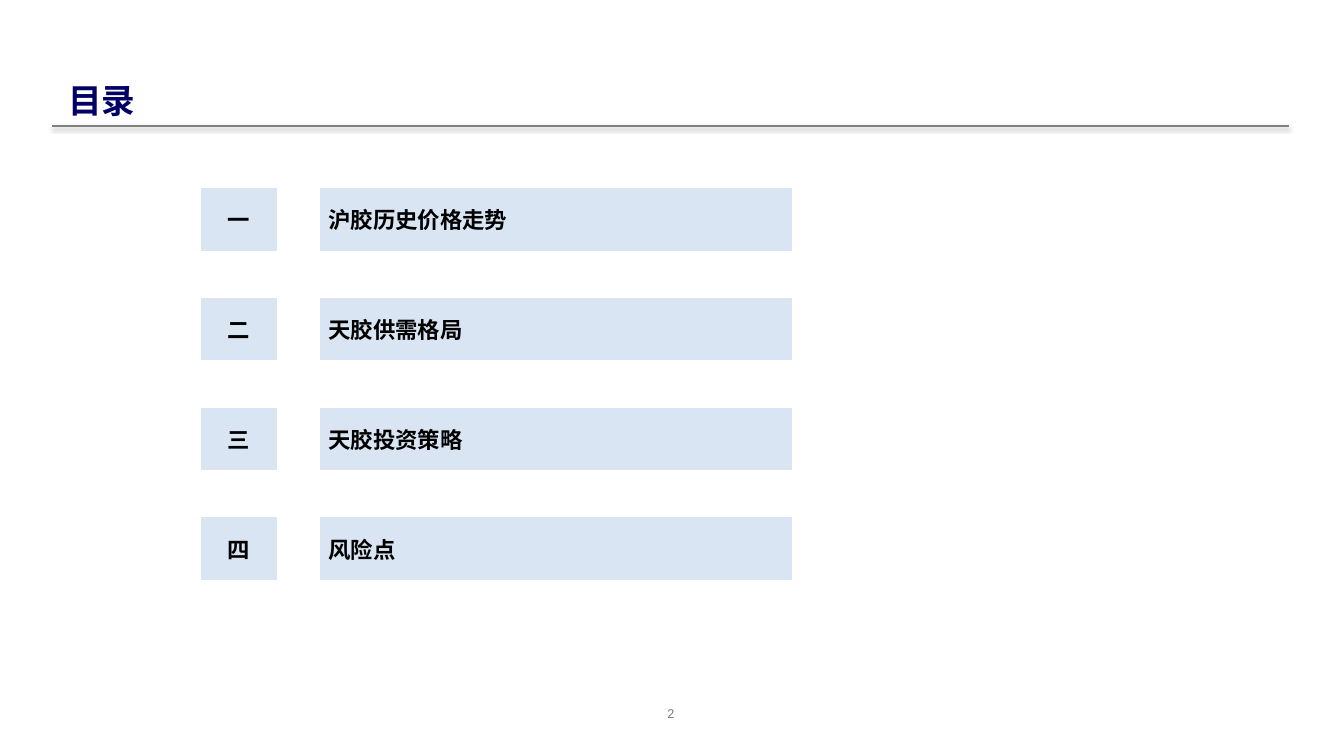
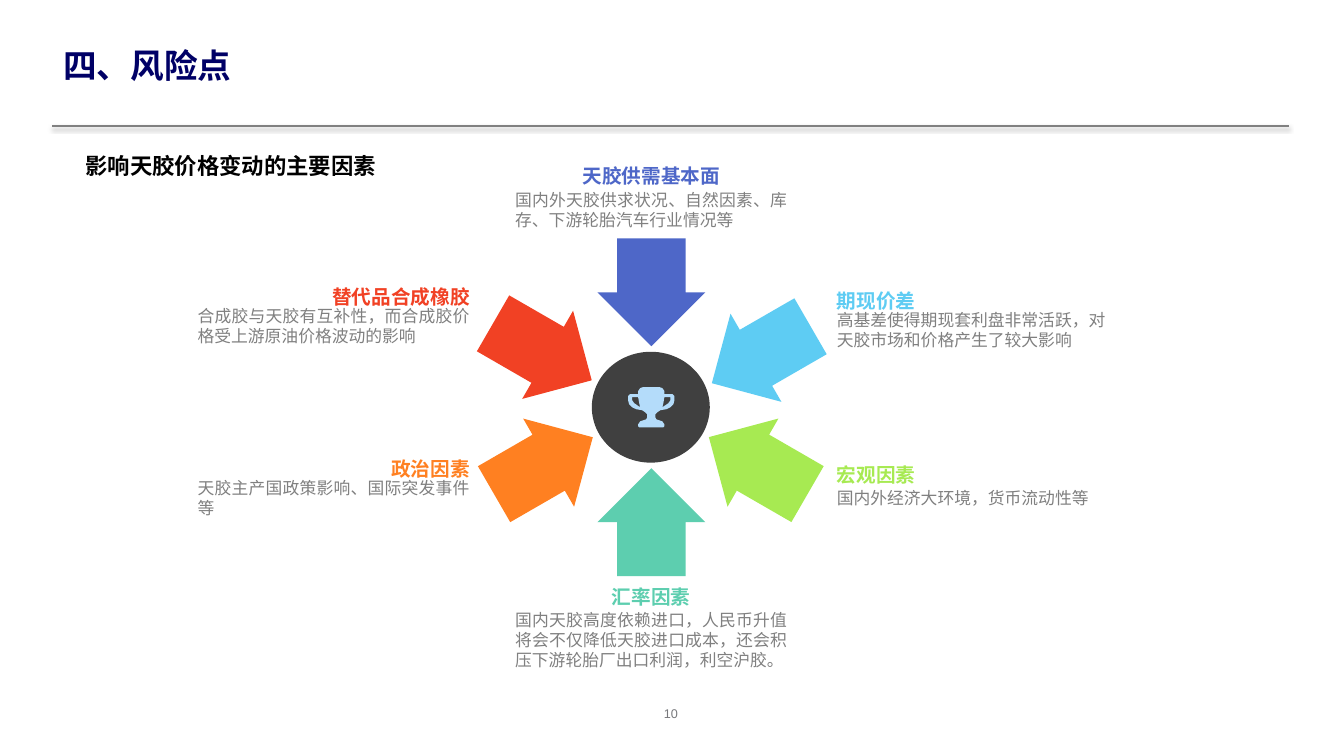
"""Build the contents slide and the risk factors slide of a rubber market deck."""
import pptx
import pptx.dml.color
import pptx.enum.shapes
import pptx.enum.text
import pptx.oxml
import pptx.oxml.ns
import pptx.util

Inches, Pt = pptx.util.Inches, pptx.util.Pt
ALIGN = pptx.enum.text.PP_ALIGN
ANCHOR = pptx.enum.text.MSO_ANCHOR
SHAPE = pptx.enum.shapes.MSO_SHAPE
NAMESPACE = pptx.oxml.ns.nsdecls("a")

COLORS = {
    "title": "000066", "text": "000000", "body": "808080", "page": "77787B",
    "rule": "808080", "white": "FFFFFF", "band": "D9E5F3", "hub": "404040",
    "trophy": "B4DCFA", "indigo": "4E67C8", "sky": "5ECCF3", "lime": "A7EA52",
    "teal": "5DCEAF", "orange": "FF8021", "red": "F14124",
}
CJK = "Noto Sans CJK SC"

CONTENTS_TITLE = "目录"
CONTENTS = [
    ("一", "沪胶历史价格走势"),
    ("二", "天胶供需格局"),
    ("三", "天胶投资策略"),
    ("四", "风险点"),
]
COLUMN_WIDTHS = (0.78, 0.4, 4.71)
ENTRY_HEIGHT, GAP_HEIGHT = 0.65, 0.44

RISK_TITLE = "四、风险点"
RISK_SUBTITLE = "影响天胶价格变动的主要因素"
COLUMNS = {
    "left": (1.96, ALIGN.RIGHT, ALIGN.JUSTIFY),
    "middle": (5.11, ALIGN.CENTER, ALIGN.JUSTIFY),
    "right": (8.3, ALIGN.LEFT, ALIGN.LEFT),
}
COLUMN_WIDTH = 2.7
# Clockwise from the top: heading, body, colour, column, heading top, body top, body height, arrow centre
FACTORS = [
    ("天胶供需基本面", "国内外天胶供求状况、自然因素、库存、下游轮胎汽车行业情况等",
     "indigo", "middle", 1.62, 1.88, 0.41, (6.46, 2.9)),
    ("期现价差", "高基差使得期现套利盘非常活跃，对天胶市场和价格产生了较大影响",
     "sky", "right", 2.86, 3.07, 0.41, (7.55, 3.52)),
    ("宏观因素", "国内外经济大环境，货币流动性等",
     "lime", "right", 4.59, 4.84, 0.21, (7.52, 4.62)),
    ("汇率因素", "国内天胶高度依赖进口，人民币升值将会不仅降低天胶进口成本，还会积压下游轮胎厂出口利润，利空沪胶。",
     "teal", "middle", 5.8, 6.05, 0.83, (6.46, 5.18)),
    ("政治因素", "天胶主产国政策影响、国际突发事件等",
     "orange", "left", 4.53, 4.74, 0.41, (5.39, 4.62)),
    ("替代品合成橡胶", "合成胶与天胶有互补性，而合成胶价格受上游原油价格波动的影响",
     "red", "left", 2.82, 3.03, 0.41, (5.38, 3.49)),
]
UPRIGHT_ARROW, SLANTED_ARROW = (1.07, 1.07), (1.01, 1.13)

TROPHY_AXIS = 6.46
TROPHY_HALF = [
    (0.08, 3.84), (0.11, 3.85), (0.13, 3.88), (0.13, 3.91), (0.21, 3.91),
    (0.23, 3.93), (0.23, 3.97), (0.22, 4.01), (0.19, 4.04), (0.15, 4.06),
    (0.09, 4.07), (0.06, 4.09), (0.04, 4.11), (0.04, 4.14), (0.05, 4.16),
    (0.08, 4.17), (0.11, 4.18), (0.13, 4.21), (0.13, 4.23), (0.12, 4.24),
]
TROPHY_HANDLE = [(0.13, 3.94), (0.19, 3.94), (0.19, 3.97), (0.17, 4.0),
                 (0.11, 4.04), (0.12, 4.0)]


def rgb(name):
    return pptx.dml.color.RGBColor.from_string(COLORS[name])


def write(frame, text, size, color, bold=False, font=CJK, align=ALIGN.LEFT, spacing=None):
    paragraph = frame.paragraphs[0]
    paragraph.alignment = align
    if spacing:
        paragraph.line_spacing = spacing
    run = paragraph.add_run()
    run.text = text
    run.font.size = Pt(size)
    run.font.bold = bold
    run.font.name = font
    run.font.color.rgb = rgb(color)
    run.font._element.find(pptx.oxml.ns.qn("a:latin")).addnext(
        pptx.oxml.parse_xml(f'<a:ea {NAMESPACE} typeface="{CJK}"/>'))


def add_text(slide, box, text, size, color, anchor=ANCHOR.TOP, inset=True, **style):
    frame = slide.shapes.add_textbox(*map(Inches, box)).text_frame
    frame.word_wrap = True
    frame.vertical_anchor = anchor
    if not inset:
        frame.margin_left = frame.margin_right = frame.margin_top = frame.margin_bottom = 0
    write(frame, text, size, color, **style)


def paint(shape, color):
    shape.shadow.inherit = False
    shape.fill.solid()
    shape.fill.fore_color.rgb = rgb(color)
    shape.line.fill.background()


def add_slide(presentation, title, title_box, number):
    slide = presentation.slides.add_slide(presentation.slide_layouts[6])
    add_text(slide, (6.46, 7, 0.39, 0.15), number, 9, "page", ANCHOR.MIDDLE,
             inset=False, font="Arial", align=ALIGN.CENTER)
    rule = slide.shapes.add_connector(
        pptx.enum.shapes.MSO_CONNECTOR.STRAIGHT,
        Inches(0.52), Inches(1.25), Inches(12.78), Inches(1.25))
    rule.line.color.rgb = rgb("rule")
    rule.line.width = Pt(1)
    rule._element.spPr.append(pptx.oxml.parse_xml(
        f'<a:effectLst {NAMESPACE}><a:outerShdw blurRad="{Pt(3.1)}" dist="{Pt(1.8)}" '
        'dir="5400000" rotWithShape="0"><a:srgbClr val="000000"><a:alpha val="35000"/>'
        '</a:srgbClr></a:outerShdw></a:effectLst>'))
    add_text(slide, title_box, title, 24, "title", ANCHOR.BOTTOM,
             bold=True, font="Arial", spacing=0.9)
    return slide


def style_cell(cell, color):
    cell.fill.solid()
    cell.fill.fore_color.rgb = rgb(color)
    cell.vertical_anchor = ANCHOR.MIDDLE
    properties = cell._tc.get_or_add_tcPr()
    for index, side in enumerate("LRTB"):
        properties.insert(index, pptx.oxml.parse_xml(
            f'<a:ln{side} {NAMESPACE} w="{Pt(2.25)}"><a:solidFill>'
            f'<a:srgbClr val="{COLORS["white"]}"/></a:solidFill></a:ln{side}>'))


def add_contents_table(slide):
    heights = (ENTRY_HEIGHT, GAP_HEIGHT) * len(CONTENTS)
    table = slide.shapes.add_table(
        len(heights), len(COLUMN_WIDTHS), Inches(1.98), Inches(1.85),
        Inches(sum(COLUMN_WIDTHS)), Inches(sum(heights))).table
    table.first_row = table.horz_banding = False
    for column, width in zip(table.columns, COLUMN_WIDTHS):
        column.width = Inches(width)
    for index, height in enumerate(heights):
        table.rows[index].height = Inches(height)
        entry, is_gap = divmod(index, 2)
        for column in range(len(COLUMN_WIDTHS)):
            cell = table.cell(index, column)
            filled = not is_gap and column != 1
            style_cell(cell, "band" if filled else "white")
            if filled:
                write(cell.text_frame, CONTENTS[entry][column // 2], 16, "text",
                      bold=True, font="Arial Narrow",
                      align=ALIGN.LEFT if column else ALIGN.CENTER)


def add_trophy(slide):
    def mirror(points):
        return [(-x, y) for x, y in points]

    def place(points):
        return [(Inches(TROPHY_AXIS + x), Inches(y)) for x, y in points]

    outline = place(TROPHY_HALF + mirror(TROPHY_HALF)[::-1])
    builder = slide.shapes.build_freeform(*outline[0])
    builder.add_line_segments(outline[1:])
    for handle in (place(TROPHY_HANDLE), place(mirror(TROPHY_HANDLE))):
        builder.move_to(*handle[0])
        builder.add_line_segments(handle[1:])
    paint(builder.convert_to_shape(), "trophy")


def add_factor(slide, index, factor):
    heading, body, color, column, heading_top, body_top, body_height, center = factor
    width, height = SLANTED_ARROW if index % 3 else UPRIGHT_ARROW
    arrow = slide.shapes.add_shape(
        SHAPE.DOWN_ARROW, Inches(center[0] - width / 2), Inches(center[1] - height / 2),
        Inches(width), Inches(height))
    arrow.adjustments[0], arrow.adjustments[1] = 0.635, 0.5
    arrow.rotation = index * 360 / len(FACTORS)
    paint(arrow, color)
    left, heading_align, body_align = COLUMNS[column]
    add_text(slide, (left, body_top, COLUMN_WIDTH, body_height), body, 12, "body",
             inset=False, align=body_align)
    add_text(slide, (left, heading_top, COLUMN_WIDTH, 0.24), heading, 14, color,
             ANCHOR.MIDDLE, inset=False, bold=True, align=heading_align)


def main():
    presentation = pptx.Presentation()
    presentation.slide_width, presentation.slide_height = Inches(13.33), Inches(7.5)

    contents = add_slide(presentation, CONTENTS_TITLE, (0.58, 0.3, 12.18, 0.95), "2")
    add_contents_table(contents)

    risks = add_slide(presentation, RISK_TITLE, (0.53, 0.39, 12.18, 0.51), "10")
    hub = risks.shapes.add_shape(
        SHAPE.OVAL, Inches(5.87), Inches(3.49), Inches(1.17), Inches(1.1))
    paint(hub, "hub")
    add_trophy(risks)
    for index, factor in enumerate(FACTORS):
        add_factor(risks, index, factor)
    add_text(risks, (0.75, 1.46, 3.3, 0.37), RISK_SUBTITLE, 16, "text", bold=True)

    presentation.save("out.pptx")


if __name__ == "__main__":
    main()
